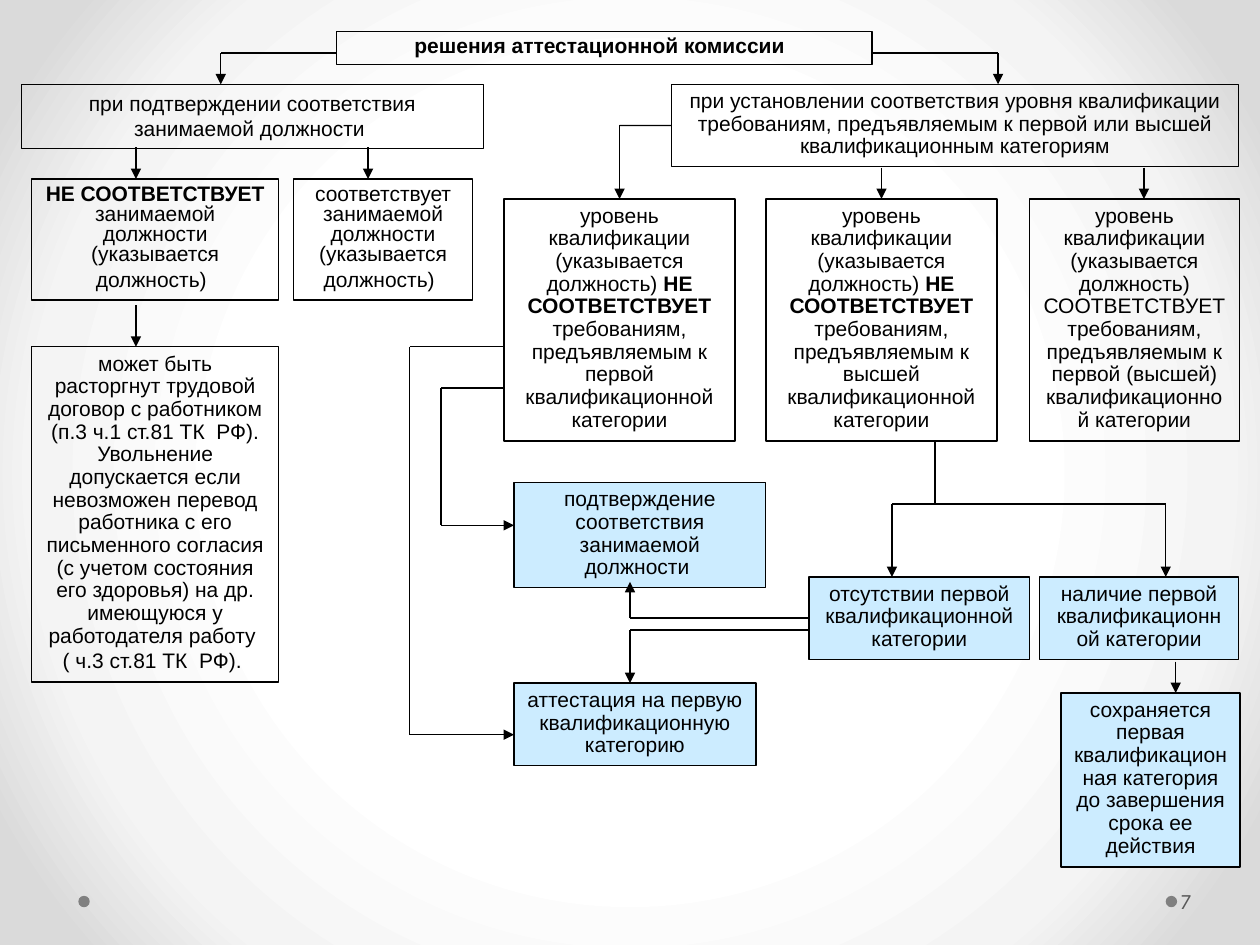
from dataclasses import dataclass
from itertools import pairwise

from pptx import Presentation
from pptx.dml.color import RGBColor
from pptx.enum.shapes import MSO_CONNECTOR, MSO_SHAPE
from pptx.enum.text import MSO_ANCHOR, MSO_AUTO_SIZE, PP_ALIGN
from pptx.oxml import parse_xml
from pptx.oxml.ns import nsdecls
from pptx.util import Cm, Pt

RECTANGLE, OVAL = MSO_SHAPE.RECTANGLE, MSO_SHAPE.OVAL
STRAIGHT = MSO_CONNECTOR.STRAIGHT
TOP, MIDDLE = MSO_ANCHOR.TOP, MSO_ANCHOR.MIDDLE
LEFT, CENTER = PP_ALIGN.LEFT, PP_ALIGN.CENTER
GROW = MSO_AUTO_SIZE.SHAPE_TO_FIT_TEXT
TOP_SIDE, LEFT_SIDE = 0, 1


@dataclass(frozen=True)
class Theme:
    ink: RGBColor = RGBColor(0, 0, 0)
    outcome: RGBColor = RGBColor(0xCC, 0xEC, 0xFF)
    dot: RGBColor = RGBColor(0x80, 0x80, 0x80)
    number: RGBColor = RGBColor(0x59, 0x59, 0x59)
    gradient: tuple = ((50, "FFFFFF"), (76, "F4F4F4"), (92, "DADADA"))
    font: str = "Arial"
    number_font: str = "League Spartan"
    body: int = 12
    small_gap: int = 16
    title_gap: int = 18
    line: float = 0.75


theme = Theme()


def write_text(frame, paragraphs, font=theme.font, color=theme.ink, align=CENTER, anchor=TOP):
    """Each paragraph is (line spacing, runs); each run is (text, size, bold)."""
    frame.word_wrap = True
    frame.vertical_anchor = anchor
    for index, (spacing, runs) in enumerate(paragraphs):
        paragraph = frame.add_paragraph() if index else frame.paragraphs[0]
        paragraph.alignment = align
        paragraph.line_spacing = spacing
        for text, size, bold in runs:
            run = paragraph.add_run()
            run.text = text
            run.font.name = font
            run.font.size = Pt(size)
            run.font.bold = bold
            run.font.color.rgb = color


def plain(text, size=theme.body, bold=False):
    return text, size, bold


presentation = Presentation()
presentation.slide_width, presentation.slide_height = Cm(25.4), Cm(19.05)
slide = presentation.slides.add_slide(presentation.slide_layouts[6])
shapes = slide.shapes

# Radial background
stops = "".join(
    f'<a:gs pos="{position * 1000}"><a:srgbClr val="{color}"/></a:gs>'
    for position, color in theme.gradient
)
background = parse_xml(
    f'<p:bg {nsdecls("p", "a")}><p:bgPr><a:gradFill rotWithShape="1"><a:gsLst>{stops}</a:gsLst>'
    '<a:path path="circle"><a:fillToRect l="50000" t="50000" r="50000" b="50000"/></a:path>'
    "</a:gradFill><a:effectLst/></p:bgPr></p:bg>"
)
slide.element.cSld.insert(0, background)

# Footer dots
for left in (23.5, 1.58):
    dot = shapes.add_shape(OVAL, Cm(left), Cm(18.06), Cm(0.23), Cm(0.23))
    dot.shadow.inherit = False
    dot.fill.solid()
    dot.fill.fore_color.rgb = theme.dot
    dot.line.fill.background()

# Wording of the boxes
NOT_MET = plain("НЕ СООТВЕТСТВУЕТ", bold=True)
LEVEL = "уровень квалификации (указывается должность) "
small_space = plain(" ", theme.small_gap)


def level_not_met(category):
    ending = f" требованиям, предъявляемым к {category} квалификационной категории"
    return [(0.9, [plain(LEVEL), NOT_MET, plain(ending)])]


# Boxes: position and size in cm, fill, paragraphs
boxes = {
    "decisions": ((6.78, 0.64, 10.8, 0.66), None, [
        (0.5, [plain("решения аттестационной комиссии", bold=True),
               plain(" ", theme.title_gap, True)])]),
    "position check": ((0.43, 1.7, 9.32, 1.3), None, [
        (1.0, [plain("при подтверждении соответствия занимаемой должности ")])]),
    "category check": ((13.54, 1.7, 11.43, 1.66), None, [
        (0.9, [plain("при установлении соответствия уровня квалификации требованиям, "
                     "предъявляемым к первой или высшей квалификационным категориям")])]),
    "fits position": ((5.92, 3.61, 3.61, 2.44), None, [
        (0.8, [plain("соответствует занимаемой должности (указывается должность)"),
               small_space])]),
    "unfit for position": ((0.64, 3.61, 4.98, 2.44), None, [
        (0.8, [NOT_MET, plain(" занимаемой должности (указывается должность)"), small_space])]),
    "level met": ((20.75, 4.01, 4.24, 4.88), None, [
        (0.9, [plain(LEVEL + "СООТВЕТСТВУЕТ требованиям, предъявляемым к первой (высшей) "
                     "квалификационной категории")])]),
    "first not met": ((10.16, 4.01, 4.66, 4.88), None, level_not_met("первой")),
    "highest not met": ((15.44, 4.01, 4.66, 4.88), None, level_not_met("высшей")),
    "dismissal": ((0.64, 6.99, 4.98, 6.76), None, [
        (0.9, [plain("может быть расторгнут трудовой договор с работником (п.3 ч.1 ст.81 ТК  РФ). "
                     "Увольнение допускается если невозможен перевод работника с его письменного "
                     "согласия (с учетом состояния его здоровья) на др. имеющуюся у работодателя "
                     "работу ")]),
        (1.0, [plain("( ч.3 ст.81 ТК  РФ). ")])]),
    "category kept": ((21.39, 13.97, 3.61, 3.51), theme.outcome, [
        (0.9, [plain("сохраняется первая квалификационная категория до завершения срока ее "
                     "действия")])]),
    "no first category": ((16.31, 11.63, 4.45, 1.66), theme.outcome, [
        (0.9, [plain("отсутствии первой квалификационной категории")])]),
    "first category held": ((20.96, 11.63, 4.01, 1.66), theme.outcome, [
        (0.9, [plain("наличие первой квалификационной категории")])]),
    "first attestation": ((10.36, 13.77, 4.88, 1.66), theme.outcome, [
        (0.9, [plain("аттестация на первую квалификационную категорию")])]),
    "position confirmed": ((10.36, 9.73, 5.08, 2.11), theme.outcome, [
        (0.9, [plain("подтверждение соответствия занимаемой должности ")])]),
}
box_shapes = {}
for name, (bounds, fill, paragraphs) in boxes.items():
    box = shapes.add_shape(RECTANGLE, *map(Cm, bounds))
    box.shadow.inherit = False
    if fill is None:
        box.fill.background()
    else:
        box.fill.solid()
        box.fill.fore_color.rgb = fill
    box.line.color.rgb = theme.ink
    box.line.width = Pt(theme.line)
    write_text(box.text_frame, paragraphs)
    box.text_frame.auto_size = GROW
    box_shapes[name] = box

# Routes: corner points in cm, arrow at the end, joined box side at start and end
routes = [
    ([(6.78, 1.07), (4.45, 1.07), (4.45, 1.7)], True, None, None),
    ([(17.58, 1.07), (20.12, 1.07), (20.12, 1.7)], True, None, None),
    ([(2.74, 2.97), (2.74, 3.61)], True, None, None),
    ([(7.42, 2.97), (7.42, 3.61)], True, None, None),
    ([(2.74, 6.15), (2.74, 6.99)], True, None, None),
    ([(13.54, 2.53), (12.49, 2.53), (12.49, 4.01)], True,
     ("category check", LEFT_SIDE), ("first not met", TOP_SIDE)),
    ([(17.77, 3.38), (17.77, 4.01)], True, None, ("highest not met", TOP_SIDE)),
    ([(23.06, 3.38), (23.06, 4.01)], True, None, None),
    ([(10.16, 7.82), (8.89, 7.82), (8.89, 10.59), (10.36, 10.59)], True, None, None),
    ([(10.16, 6.99), (8.26, 6.99), (8.26, 14.81), (10.36, 14.81)], True, None, None),
    ([(18.85, 8.89), (18.85, 10.16)], False, None, None),
    ([(18.85, 10.16), (17.98, 10.16), (17.98, 11.63)], True, None, None),
    ([(18.85, 10.16), (23.5, 10.16), (23.5, 11.63)], True, None, None),
    ([(23.7, 13.34), (23.7, 13.97)], True, None, None),
    ([(16.31, 12.46), (12.7, 12.46), (12.7, 11.73)], True,
     ("no first category", LEFT_SIDE), None),
    ([(16.31, 12.7), (12.7, 12.7), (12.7, 13.77)], True, None, None),
]
for points, arrow, start, end in routes:
    segments = []
    for (x1, y1), (x2, y2) in pairwise(points):
        segment = shapes.add_connector(STRAIGHT, Cm(x1), Cm(y1), Cm(x2), Cm(y2))
        segment.line.color.rgb = theme.ink
        segment.line.width = Pt(theme.line)
        segment.element.spPr.append(parse_xml(f'<a:effectLst {nsdecls("a")}/>'))
        segments.append(segment)
    if arrow:
        segments[-1].line._get_or_add_ln().append(
            parse_xml(f'<a:tailEnd {nsdecls("a")} type="triangle"/>'))
    if start:
        segments[0].begin_connect(box_shapes[start[0]], start[1])
    if end:
        segments[-1].end_connect(box_shapes[end[0]], end[1])

# Slide number
number = shapes.add_textbox(Cm(23.72), Cm(17.65), Cm(1.55), Cm(1.02))
number.text_frame.margin_left = Cm(0.08)
number.text_frame.margin_right = Cm(0.13)
write_text(number.text_frame, [(1.0, [plain("7")])], font=theme.number_font,
           color=theme.number, align=LEFT, anchor=MIDDLE)

presentation.save("out.pptx")
